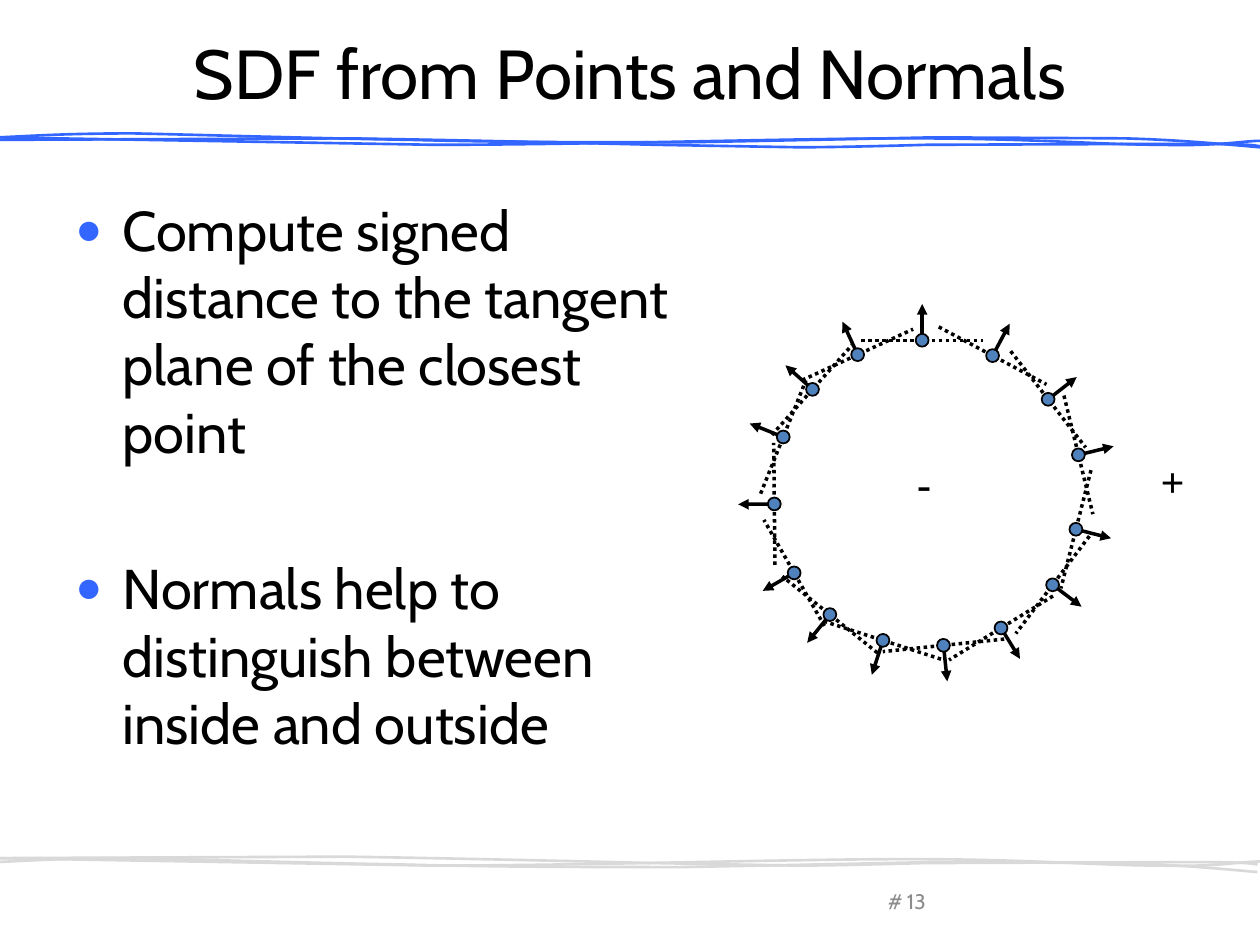
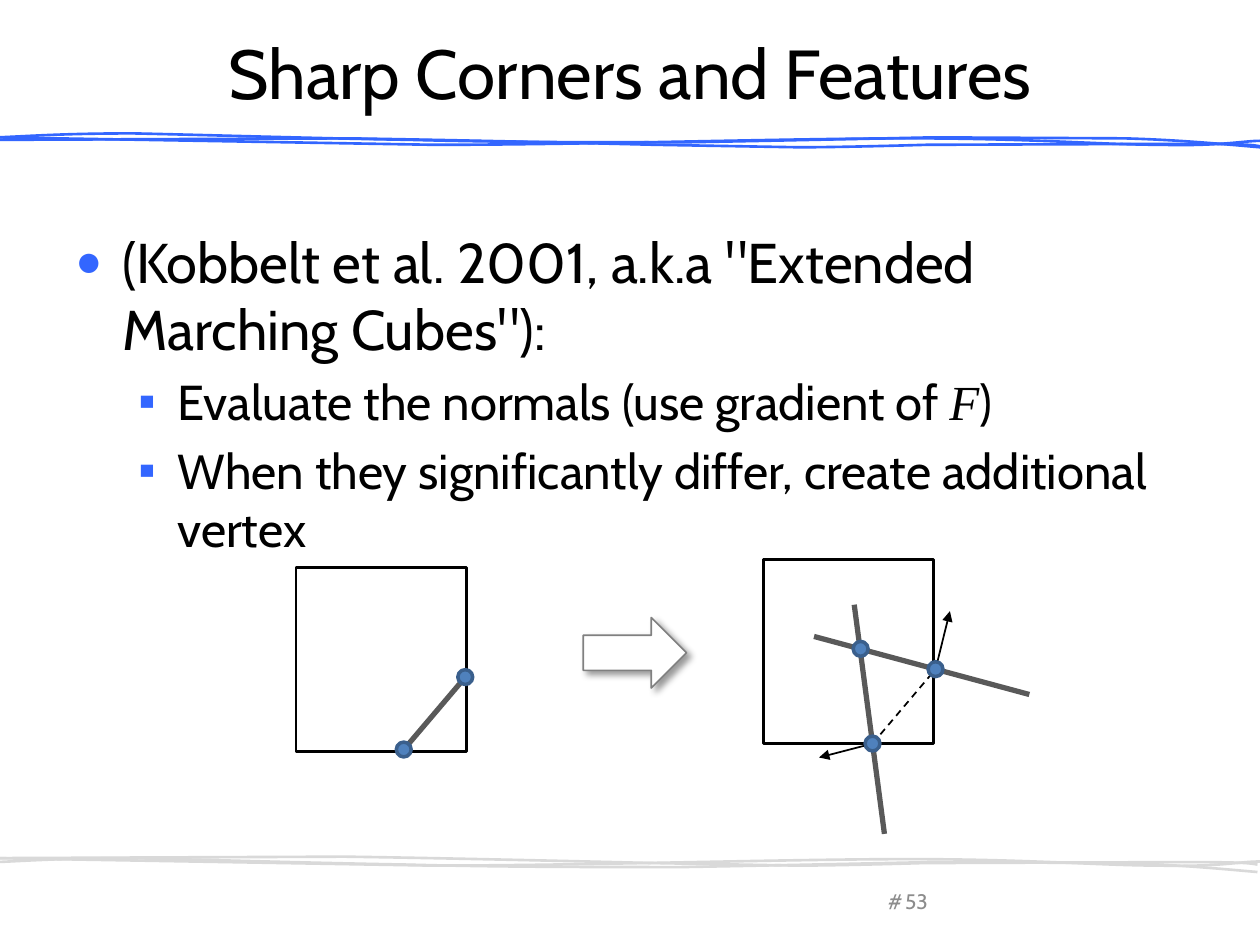
import math
from itertools import chain
from lxml import etree
from pptx import Presentation
from pptx import util as u
from pptx.dml.color import RGBColor
from pptx.enum import dml, shapes, text
from pptx.oxml.ns import qn

BLACK = RGBColor(0x00, 0x00, 0x00)
WHITE = RGBColor(0xFF, 0xFF, 0xFF)
ACCENT = RGBColor(0x33, 0x66, 0xFF)
PALE_GREY = RGBColor(0xD9, 0xD9, 0xD9)
FOOTER_GREY = RGBColor(0x8C, 0x8C, 0x8C)
DARK_GREY = RGBColor(0x59, 0x59, 0x59)
ARROW_GREY = RGBColor(0x80, 0x80, 0x80)
DOT_BLUE = RGBColor(0x4F, 0x81, 0xBD)
DOT_EDGE = RGBColor(0x3A, 0x5F, 0x8C)

SANS = "Cabin"
SERIF = "Times New Roman"

# Wavy rule: each strand is a start point, then straight (1 point) or
# cubic (3 points) segments, in cm; the drop takes it to the footer.
STRANDS = [
    (14.53, (-0.03, 2.77), [
        [(8.74, 2.92)],
        [(11.81, 2.92), (15.93, 2.79), (18.36, 2.79)],
        [(20.8, 2.79), (22.25, 2.92), (23.42, 2.92)],
        [(24.59, 2.95), (25.07, 2.84), (25.4, 2.84)],
        [(25.73, 2.82), (25.55, 2.84), (25.37, 2.84)]]),
    (14.61, (-0.03, 2.77), [
        [(0.66, 2.74), (1.32, 2.69), (2.69, 2.69)],
        [(4.09, 2.72), (6.4, 2.79), (8.26, 2.82)],
        [(10.08, 2.87), (12.04, 2.87), (13.79, 2.87)],
        [(15.54, 2.84), (18.8, 2.77), (18.8, 2.77)],
        [(22.66, 2.79)],
        [(23.75, 2.82), (24.59, 2.9), (25.4, 2.97)]]),
    (14.48, (-0.05, 2.82), [
        [(6.99, 2.79)],
        [(9.19, 2.82), (13.21, 2.92), (13.21, 2.92)],
        [(16.1, 2.97)],
        [(17.02, 2.97), (18.67, 2.92), (18.67, 2.92)],
        [(23.95, 2.9)],
        [(25.07, 2.9), (25.25, 2.92), (25.4, 2.95)]]),
]

# Bullet level: character, size in percent, left margin, hang (cm), text size
BULLETS = [("●", 80, 0.95, 0.95, 32), ("▪", 100, 2.06, 0.79, 28)]

# Sampled points: x, y in cm and the normal's angle clockwise from up
SAMPLES = [
    (18.59, 6.86, 0), (20.01, 7.17, 28.1), (21.13, 8.05, 52.1),
    (21.74, 9.17, 76.3), (21.69, 10.67, 104.3), (21.22, 11.79, 127.1),
    (20.18, 12.66, 148.4), (19.02, 13.01, 174.1), (17.8, 12.91, 197.9),
    (16.73, 12.39, 218.8), (16.01, 11.55, 240.3), (15.61, 10.16, 269.4),
    (15.79, 8.81, 291.8), (16.38, 7.85, 311.7), (17.29, 7.15, 335.3),
]
TANGENT_HALF = 1.23
NORMAL_LENGTH = 0.73


def add_element(parent, tag, **attributes):
    values = {name: str(value) for name, value in attributes.items()}
    return etree.SubElement(parent, qn(tag), values)


class Deck:
    """Holds the style and the slide being built."""

    def __init__(self):
        self.presentation = Presentation()
        self.presentation.slide_width = u.Cm(25.4)
        self.presentation.slide_height = u.Cm(19.05)
        self.slide = None

    def new_slide(self, title, number):
        layout = self.presentation.slide_layouts[6]
        self.slide = self.presentation.slides.add_slide(layout)
        self.wavy_rule(ACCENT)
        self.wavy_rule(PALE_GREY, footer=True)
        centre = text.PP_ALIGN.CENTER
        self.label("#", 17.65, 17.78, 0.76, 0.76, 12, FOOTER_GREY, centre)
        self.label(title, 1.27, 0.78, 22.86, 1.35, 39.6, BLACK, centre)
        self.label(number, 17.65, 17.65, 1.65, 1.02, 12, FOOTER_GREY, centre)

    def wavy_rule(self, color, footer=False):
        for drop, start, segments in STRANDS:
            dx, dy = (-0.05, drop) if footer else (0, 0)
            points = [(u.Cm(x + dx), u.Cm(y + dy))
                      for x, y in chain([start], *segments)]
            builder = self.slide.shapes.build_freeform(*points[0])
            builder.add_line_segments(points[1:], close=False)
            strand = builder.convert_to_shape()
            self.bend(strand, segments)
            self.paint(strand, None, color, 1.5)

    def bend(self, strand, segments):
        """Join the three points of each cubic segment into one curve."""
        outline = next(strand._element.iter(qn("a:path")))
        steps = iter(outline.findall(qn("a:lnTo")))
        for segment in segments:
            parts = [next(steps) for _ in segment]
            if len(parts) == 3:
                curve = add_element(outline, "a:cubicBezTo")
                parts[0].addprevious(curve)
                for part in parts:
                    curve.append(part[0])
                    outline.remove(part)

    def paint(self, shape, fill, line, width):
        shape.shadow.inherit = False
        if fill is None:
            shape.fill.background()
        else:
            shape.fill.solid()
            shape.fill.fore_color.rgb = fill
        shape.line.color.rgb = line
        shape.line.width = u.Pt(width)

    def text_box(self, x, y, width, height):
        return self.slide.shapes.add_textbox(
            u.Cm(x), u.Cm(y), u.Cm(width), u.Cm(height))

    def label(self, words, x, y, width, height, size, color, align):
        frame = self.text_box(x, y, width, height).text_frame
        frame.word_wrap = True
        frame.vertical_anchor = text.MSO_ANCHOR.MIDDLE
        frame.text = words
        paragraph = frame.paragraphs[0]
        paragraph.alignment = align
        self.format_run(paragraph.runs[0], size, color)

    def sign(self, symbol, x, y, width):
        frame = self.text_box(x, y, width, 1.27).text_frame
        frame.word_wrap = False
        frame.auto_size = text.MSO_AUTO_SIZE.SHAPE_TO_FIT_TEXT
        frame.text = symbol
        run = frame.paragraphs[0].runs[0]
        self.format_run(run, 24, BLACK, SERIF)
        run.font.bold = True

    def format_run(self, run, size, color, font=SANS):
        run.font.name = font
        run.font.size = u.Pt(size)
        run.font.color.rgb = color

    def bullets(self, items, width, top_inset=0.13):
        """Items are (level, space before in points, runs); a run of
        one letter is set as a variable."""
        frame = self.text_box(1.27, 3.81, width, 12.7).text_frame
        frame.word_wrap = True
        frame.margin_top = u.Cm(top_inset)
        for index, (level, space, runs) in enumerate(items):
            paragraph = frame.paragraphs[0] if index == 0 else frame.add_paragraph()
            character, percent, margin, hang, size = BULLETS[level]
            properties = paragraph._p.get_or_add_pPr()
            properties.set("marL", str(u.Cm(margin)))
            properties.set("indent", str(-u.Cm(hang)))
            color = add_element(properties, "a:buClr")
            add_element(color, "a:srgbClr", val=ACCENT)
            add_element(properties, "a:buSzPct", val=percent * 1000)
            add_element(properties, "a:buFont", typeface="Arial")
            add_element(properties, "a:buChar", char=character)
            paragraph.level = level
            if space:
                paragraph.space_before = u.Pt(space)
            for words in runs:
                run = paragraph.add_run()
                run.text = words
                is_variable = len(words) == 1 and words.isalpha()
                self.format_run(run, size, BLACK, SERIF if is_variable else SANS)
                run.font.italic = is_variable

    def line(self, start, end, color=BLACK, width=1, dash=None, arrow=False):
        connector = self.slide.shapes.add_connector(
            shapes.MSO_CONNECTOR.STRAIGHT, *map(u.Cm, (*start, *end)))
        connector.line.color.rgb = color
        connector.line.width = u.Pt(width)
        if dash is not None:
            connector.line.dash_style = dash
        if arrow:
            add_element(connector.line._get_or_add_ln(), "a:tailEnd", type="triangle")
        add_element(connector._element.spPr, "a:effectLst")

    def shape(self, kind, x, y, width, height, fill, line, line_width):
        shape = self.slide.shapes.add_shape(
            kind, u.Cm(x), u.Cm(y), u.Cm(width), u.Cm(height))
        self.paint(shape, fill, line, line_width)
        return shape

    def dot(self, centre, size, edge, edge_width):
        x, y = centre
        self.shape(shapes.MSO_SHAPE.OVAL, x - size / 2, y - size / 2,
                   size, size, DOT_BLUE, edge, edge_width)

    def cell(self, x, y):
        self.shape(shapes.MSO_SHAPE.RECTANGLE, x, y, 3.43, 3.71, None, BLACK, 1.5)

    def block_arrow(self, x, y):
        arrow = self.shape(shapes.MSO_SHAPE.RIGHT_ARROW, x, y, 2.08, 1.42,
                           WHITE, ARROW_GREY, 1)
        effects = arrow._element.spPr.find(qn("a:effectLst"))
        shadow = add_element(effects, "a:outerShdw", blurRad=u.Pt(4),
                             dist=u.Pt(3), dir=45 * 60000, algn="tl", rotWithShape=0)
        color = add_element(shadow, "a:srgbClr", val=BLACK)
        add_element(color, "a:alpha", val=40000)


def build_distance_slide(deck):
    deck.new_slide("SDF from Points and Normals", "13")
    deck.bullets([
        (0, 0, ["Compute signed distance to the tangent plane of the closest point"]),
        (0, 51.2, ["Normals help to distinguish between inside and outside"]),
    ], width=13.26)

    # Tangent planes and normals, then the points on top
    for x, y, angle in SAMPLES:
        cos, sin = math.cos(math.radians(angle)), math.sin(math.radians(angle))
        dx, dy = TANGENT_HALF * cos, TANGENT_HALF * sin
        deck.line((x - dx, y - dy), (x + dx, y + dy), width=2,
                  dash=dml.MSO_LINE.ROUND_DOT)
        tip = (x + NORMAL_LENGTH * sin, y - NORMAL_LENGTH * cos)
        deck.line((x, y), tip, width=2, arrow=True)
    for x, y, _ in SAMPLES:
        deck.dot((x, y), 0.26, BLACK, 1)

    # Inside and outside
    deck.sign("-", 18.24, 9.09, 0.79)
    deck.sign("+", 23.15, 9.05, 1.02)


def build_corner_slide(deck):
    deck.new_slide("Sharp Corners and Features", "53")
    deck.bullets([
        (0, 0, ['(Kobbelt et al. 2001, a.k.a "Extended Marching Cubes"):']),
        (1, 5.6, ["Evaluate the normals (use gradient of ", "F", ")"]),
        (1, 5.6, ["When they significantly differ, create additional vertex"]),
    ], width=22.86, top_inset=0.77)

    # Cell with the corner cut off
    bottom, side = (8.14, 15.11), (9.38, 13.65)
    deck.cell(5.97, 11.44)
    deck.line(bottom, side, DARK_GREY, 3)
    for centre in (bottom, side):
        deck.dot(centre, 0.3, DOT_EDGE, 2)

    deck.block_arrow(11.76, 12.45)

    # Cell with normals, tangents and the additional vertex
    bottom, side, vertex = (17.59, 14.99), (18.86, 13.49), (17.35, 13.08)
    deck.cell(15.39, 11.28)
    deck.line(side, (19.15, 12.32), arrow=True)
    deck.line(bottom, (16.51, 15.27), arrow=True)
    deck.line(bottom, side, dash=dml.MSO_LINE.DASH)
    deck.line((17.83, 16.81), (17.22, 12.19), DARK_GREY, 3)
    deck.line((16.41, 12.83), (20.75, 14), DARK_GREY, 3)
    for centre in (bottom, side, vertex):
        deck.dot(centre, 0.3, DOT_EDGE, 2)


def main():
    deck = Deck()
    build_distance_slide(deck)
    build_corner_slide(deck)
    deck.presentation.save("out.pptx")


if __name__ == "__main__":
    main()
